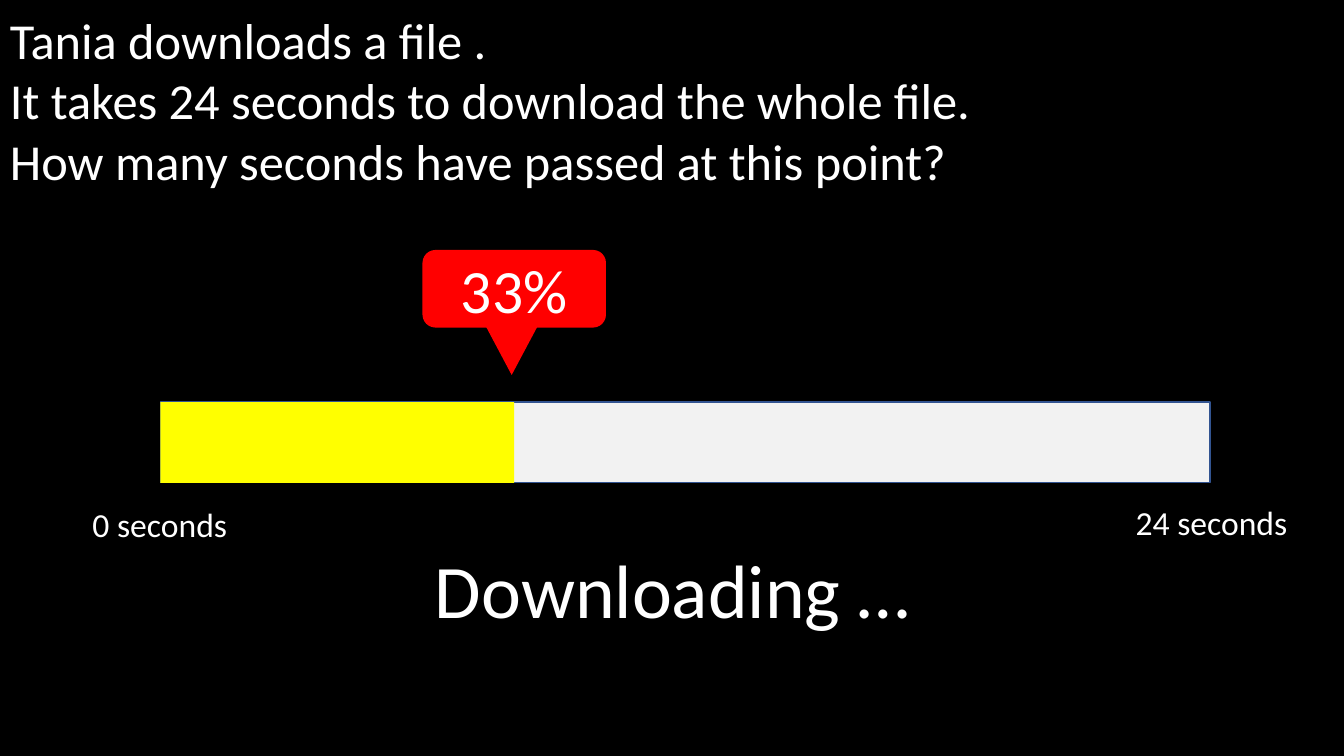
from pptx import Presentation
from pptx.dml.color import RGBColor
from pptx.enum.shapes import MSO_SHAPE
from pptx.enum.text import MSO_ANCHOR, MSO_AUTO_SIZE, PP_ALIGN
from pptx.util import Inches, Pt

BLACK, WHITE, GREY = "000000", "FFFFFF", "F2F2F2"
YELLOW, RED, BLUE = "FFFF00", "FF0000", "325491"


def color(hex_code):
    return RGBColor.from_string(hex_code)


class SlideBuilder:
    font_name = "Calibri"
    font_color = WHITE

    def __init__(self, slide, background):
        self.slide = slide
        fill = slide.background.fill
        fill.solid()
        fill.fore_color.rgb = color(background)

    def shape(self, preset, box, fill, line=None, parent=None):
        """Add a filled preset shape to the slide, or to a parent group."""
        shapes = (parent or self.slide).shapes
        shape = shapes.add_shape(preset, *map(Inches, box))
        shape.shadow.inherit = False
        shape.fill.solid()
        shape.fill.fore_color.rgb = color(fill)
        if line:
            shape.line.color.rgb = color(line)
            shape.line.width = Pt(1)
        else:
            shape.line.fill.background()
        return shape

    def add_lines(self, frame, lines, size, align):
        """Fill a text frame with one paragraph per line."""
        frame.word_wrap = True
        for index, line in enumerate(lines):
            paragraph = frame.paragraphs[0] if index == 0 else frame.add_paragraph()
            paragraph.alignment = align
            run = paragraph.add_run()
            run.text = line
            run.font.name = self.font_name
            run.font.size = Pt(size)
            run.font.color.rgb = color(self.font_color)

    def text(self, box, lines, size, align=PP_ALIGN.CENTER):
        frame = self.slide.shapes.add_textbox(*map(Inches, box)).text_frame
        self.add_lines(frame, lines, size, align)
        frame.auto_size = MSO_AUTO_SIZE.SHAPE_TO_FIT_TEXT

    def marker(self, label_box, pointer_box, label):
        """Add a grouped label with a triangle pointing down."""
        group = self.slide.shapes.add_group_shape()
        badge = self.shape(MSO_SHAPE.FLOWCHART_ALTERNATE_PROCESS, label_box, RED, parent=group)
        badge.text_frame.vertical_anchor = MSO_ANCHOR.MIDDLE
        self.add_lines(badge.text_frame, [label], 44, PP_ALIGN.CENTER)
        self.shape(MSO_SHAPE.FLOWCHART_MERGE, pointer_box, RED, parent=group)


def main():
    presentation = Presentation()
    presentation.slide_width = Inches(13.33)
    presentation.slide_height = Inches(7.5)
    slide = presentation.slides.add_slide(presentation.slide_layouts[6])
    builder = SlideBuilder(slide, BLACK)

    bar_left, bar_top, bar_height = 1.59, 3.99, 0.8
    for width, fill, line in ((10.41, GREY, BLUE), (3.51, YELLOW, None)):
        builder.shape(MSO_SHAPE.RECTANGLE, (bar_left, bar_top, width, bar_height), fill, line)

    builder.marker((4.19, 2.48, 1.82, 0.77), (4.82, 3.24, 0.51, 0.48), "33%")

    builder.text((3.86, 5.34, 5.62, 1.01), ["Downloading …"], 54)
    question = [
        "Tania downloads a file .",
        "It takes 24 seconds to download the whole file.",
        "How many seconds have passed at this point?",
    ]
    builder.text((0, 0.04, 13.33, 1.92), question, 36, PP_ALIGN.LEFT)
    for left, top, time in ((0.66, 4.95, "0 seconds"), (11.09, 4.93, "24 seconds")):
        builder.text((left, top, 1.85, 0.5), [time], 24)

    presentation.save("out.pptx")


if __name__ == "__main__":
    main()
